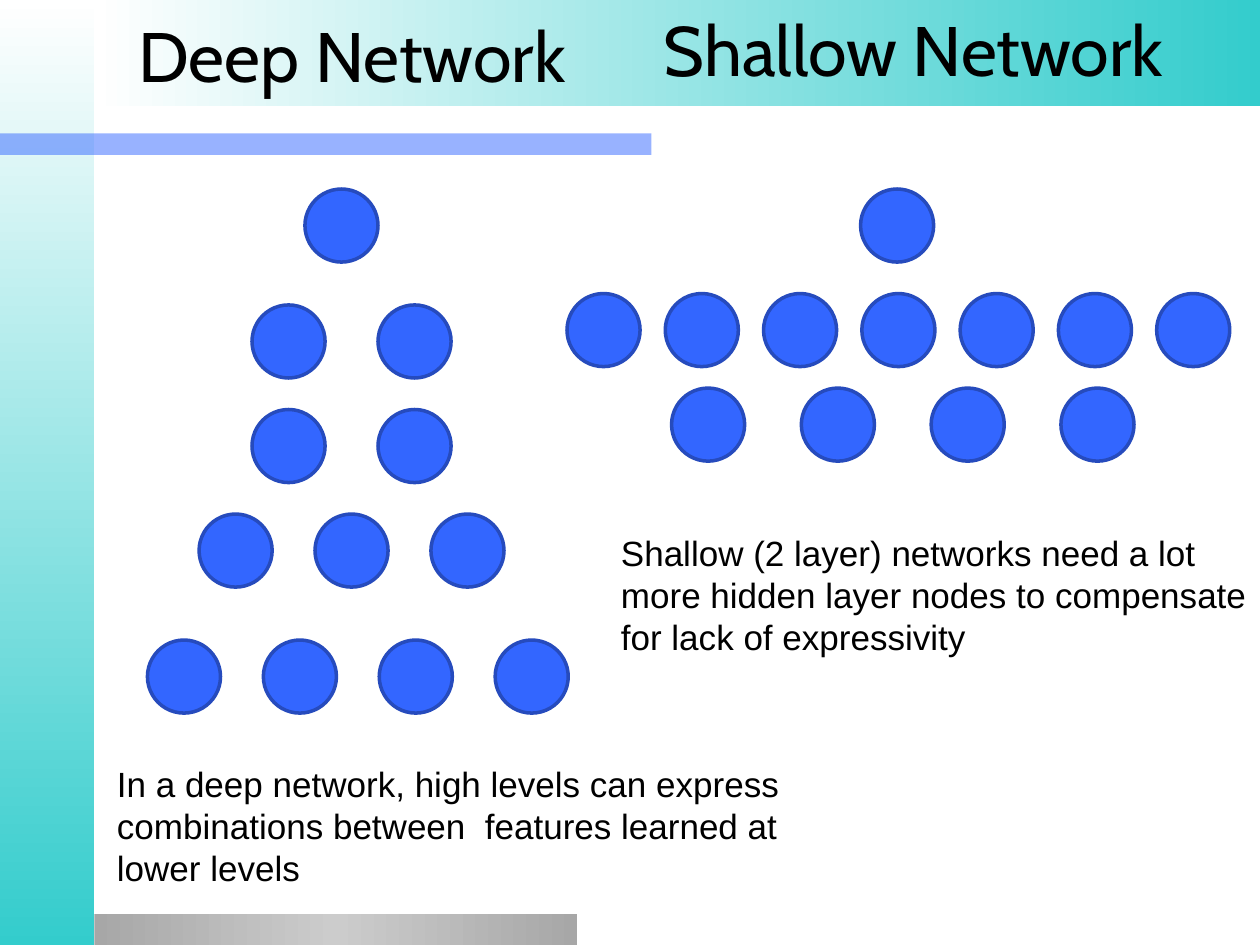
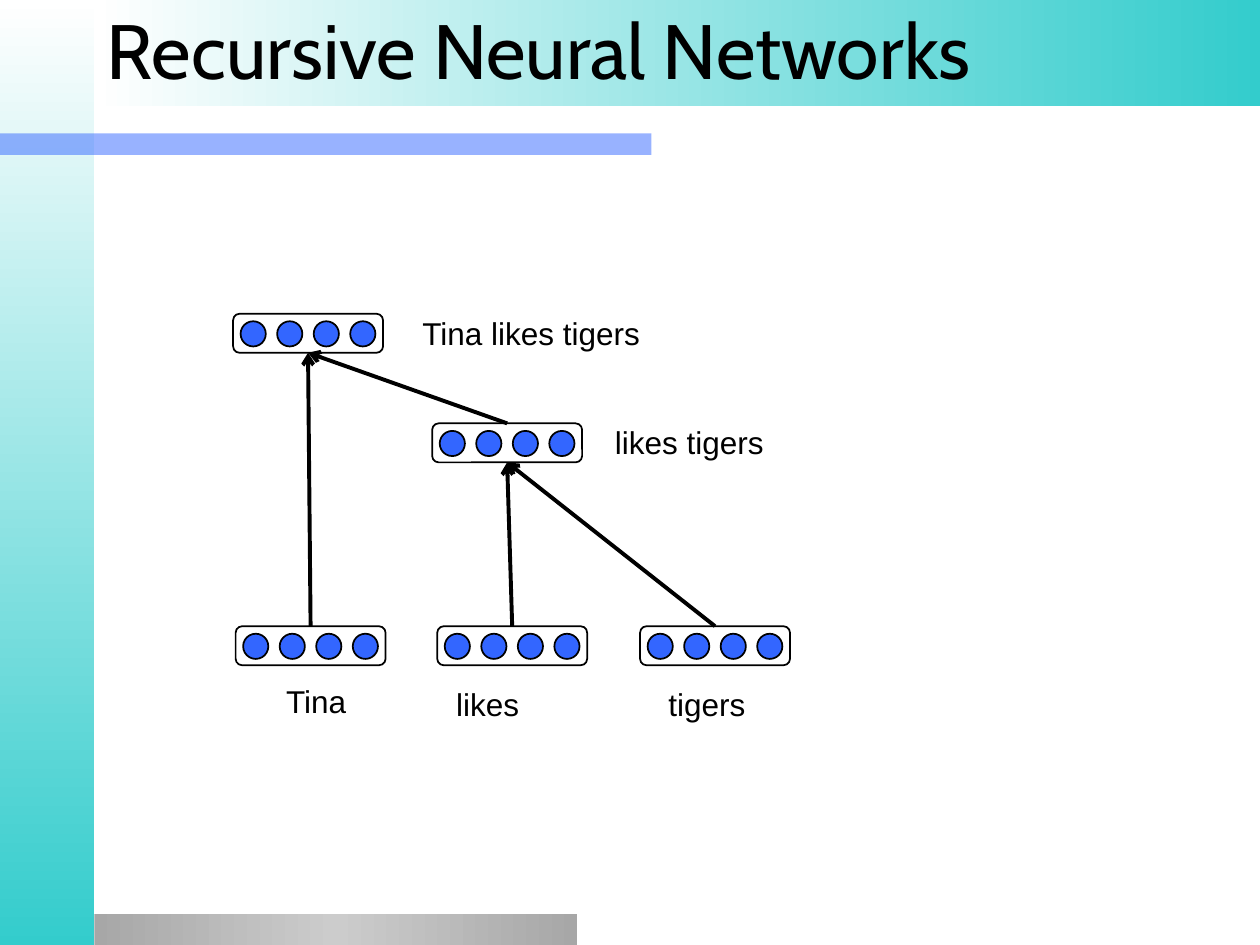
from lxml import etree
from pptx import Presentation
from pptx.dml.color import RGBColor
from pptx.enum.shapes import MSO_CONNECTOR, MSO_SHAPE
from pptx.enum.text import MSO_ANCHOR, PP_ALIGN
from pptx.oxml.ns import qn
from pptx.util import Inches, Pt

RECT, ROUND_RECT, OVAL = MSO_SHAPE.RECTANGLE, MSO_SHAPE.ROUNDED_RECTANGLE, MSO_SHAPE.OVAL
STRAIGHT = MSO_CONNECTOR.STRAIGHT
TOP, MIDDLE = MSO_ANCHOR.TOP, MSO_ANCHOR.MIDDLE
LEFT, CENTER = PP_ALIGN.LEFT, PP_ALIGN.CENTER
TOP_SIDE, BOTTOM_SIDE = 0, 2

COLORS = {
    "white": "FFFFFF",
    "black": "000000",
    "teal": "33CCCC",
    "blue": "3366FF",
    "dark_blue": "264BBD",
    "gray": "A7A7A7",
    "light_gray": "CCCCCC",
}
TITLE_FONT, BODY_FONT = "Cabin", "Arial"

NODE_SIZE = 0.58
DOT_SIZE, DOT_GAP, DOT_INSET, DOTS = 0.2, 0.29, 0.06, 4
VECTOR_WIDTH, VECTOR_HEIGHT = 1.19, 0.31


def rgb(color):
    return RGBColor.from_string(COLORS[color])


class Deck:
    """Holds the presentation's style and the slide being filled."""

    def __init__(self):
        self.presentation = Presentation()
        self.presentation.slide_width = Inches(10)
        self.presentation.slide_height = Inches(7.5)
        self.slide = None

    def new_slide(self):
        blank = self.presentation.slide_layouts[6]
        self.slide = self.presentation.slides.add_slide(blank)
        self.gradient_band(0, 0, 0.75, 7.5, ["white", "teal"], angle=270)
        accent = self.shape(RECT, 0, 1.06, 5.17, 0.17, "blue")
        accent_color = accent.fill._xPr.find(".//" + qn("a:srgbClr"))
        etree.SubElement(accent_color, qn("a:alpha"), val="50000")
        self.gradient_band(0.75, 7.25, 3.83, 0.25, ["gray", "light_gray", "gray"])
        self.gradient_band(0.75, 0, 9.26, 0.84, ["white", "teal"])

    def shape(self, kind, left, top, width, height, fill, line=None, line_width=1, parent=None):
        shapes = (parent or self.slide).shapes
        shape = shapes.add_shape(kind, Inches(left), Inches(top), Inches(width), Inches(height))
        shape.shadow.inherit = False
        shape.fill.solid()
        shape.fill.fore_color.rgb = rgb(fill)
        if line:
            shape.line.color.rgb = rgb(line)
            shape.line.width = Pt(line_width)
        else:
            shape.line.fill.background()
        return shape

    def gradient_band(self, left, top, width, height, colors, angle=0):
        """Draw a band whose colours are spread evenly along the gradient."""
        band = self.shape(RECT, left, top, width, height, colors[0])
        band.fill.gradient()
        band.fill.gradient_angle = angle
        stops = band.element.spPr.find(".//" + qn("a:gsLst"))
        stops.clear()
        for index, color in enumerate(colors):
            position = 100000 * index // (len(colors) - 1)
            stop = etree.SubElement(stops, qn("a:gs"), pos=str(position))
            etree.SubElement(stop, qn("a:srgbClr"), val=COLORS[color])

    def text(self, words, left, top, width, height, size, font=BODY_FONT,
             anchor=TOP, align=LEFT, inset=True, spacing=None):
        box = self.slide.shapes.add_textbox(
            Inches(left), Inches(top), Inches(width), Inches(height))
        frame = box.text_frame
        frame.word_wrap = True
        frame.vertical_anchor = anchor
        if not inset:
            frame.margin_left = frame.margin_right = 0
            frame.margin_top = frame.margin_bottom = 0
        paragraph = frame.paragraphs[0]
        paragraph.alignment = align
        if spacing:
            paragraph.line_spacing = Pt(spacing)
        run = paragraph.add_run()
        run.text = words
        run.font.size = Pt(size)
        run.font.name = font
        run.font.color.rgb = rgb("black")

    def title(self, words, left, top, width, height, size=40, anchor=MIDDLE):
        self.text(words, left, top, width, height, size, TITLE_FONT, anchor)

    def explanation(self, words, left, top, width, height):
        self.text(words, left, top, width, height, 20, spacing=24)

    def label(self, words, left, top, width):
        self.text(words, left, top, width, 0.3, 18, align=CENTER, inset=False)

    def layer(self, top, left, pitch, count):
        """Draw one row of network nodes."""
        for index in range(count):
            self.shape(OVAL, left + index * pitch, top, NODE_SIZE, NODE_SIZE,
                       "blue", "dark_blue", 2)

    def vector(self, left, top):
        """Draw a grouped row of dots and return the frame around it."""
        group = self.slide.shapes.add_group_shape()
        frame = self.shape(ROUND_RECT, left, top, VECTOR_WIDTH, VECTOR_HEIGHT,
                           "white", "black", parent=group)
        for index in range(DOTS):
            self.shape(OVAL, left + DOT_INSET + index * DOT_GAP, top + DOT_INSET,
                       DOT_SIZE, DOT_SIZE, "blue", "black", parent=group)
        return frame

    def arrow(self, child, parent):
        """Point from the top of a child vector to the bottom of its parent."""
        connector = self.slide.shapes.add_connector(STRAIGHT, 0, 0, 0, 0)
        connector.begin_connect(child, TOP_SIDE)
        connector.end_connect(parent, BOTTOM_SIDE)
        connector.line.color.rgb = rgb("black")
        connector.line.width = Pt(2.25)
        etree.SubElement(connector.line._get_or_add_ln(), qn("a:tailEnd"), type="arrow")
        etree.SubElement(connector.element.spPr, qn("a:effectLst"))


def build_network_comparison(deck):
    deck.new_slide()
    deck.title("Deep Network", 1, 0.03, 3.92, 0.81)
    deck.title("Shallow Network", 5.17, 0, 4.58, 0.84, anchor=TOP)

    deep_layers = [
        (1.5, 2.42, 0, 1),
        (2.42, 2, 1, 2),
        (3.25, 2, 1, 2),
        (4.08, 1.58, 0.92, 3),
        (5.08, 1.17, 0.92, 4),
    ]
    shallow_layers = [
        (1.5, 6.83, 0, 1),
        (2.33, 4.5, 0.78, 7),
        (3.08, 5.33, 1.03, 4),
    ]
    for top, left, pitch, count in deep_layers + shallow_layers:
        deck.layer(top, left, pitch, count)

    deck.explanation("Shallow (2 layer) networks need a lot more hidden layer nodes "
                     "to compensate for lack of expressivity", 4.83, 4.17, 5.17, 1.11)
    deck.explanation("In a deep network, high levels can express combinations between  "
                     "features learned at lower levels", 0.83, 6, 6, 1.45)


def build_recursive_networks(deck):
    deck.new_slide()
    deck.title("Recursive Neural Networks", 0.75, -0.03, 9.26, 0.83, size=44)

    tina = deck.vector(1.87, 4.97)
    likes = deck.vector(3.47, 4.97)
    tigers = deck.vector(5.08, 4.97)
    likes_tigers = deck.vector(3.43, 3.36)
    sentence = deck.vector(1.85, 2.49)

    deck.label("Tina", 2.14, 5.41, 0.74)
    deck.label("likes", 3.5, 5.44, 0.74)
    deck.label("tigers", 5.24, 5.44, 0.74)
    deck.label("likes tigers", 4.76, 3.36, 1.42)
    deck.label("Tina likes tigers", 3.19, 2.49, 2.05)

    for child, parent in [(tina, sentence), (likes, likes_tigers),
                          (tigers, likes_tigers), (likes_tigers, sentence)]:
        deck.arrow(child, parent)


def main():
    deck = Deck()
    build_network_comparison(deck)
    build_recursive_networks(deck)
    deck.presentation.save("out.pptx")


if __name__ == "__main__":
    main()
